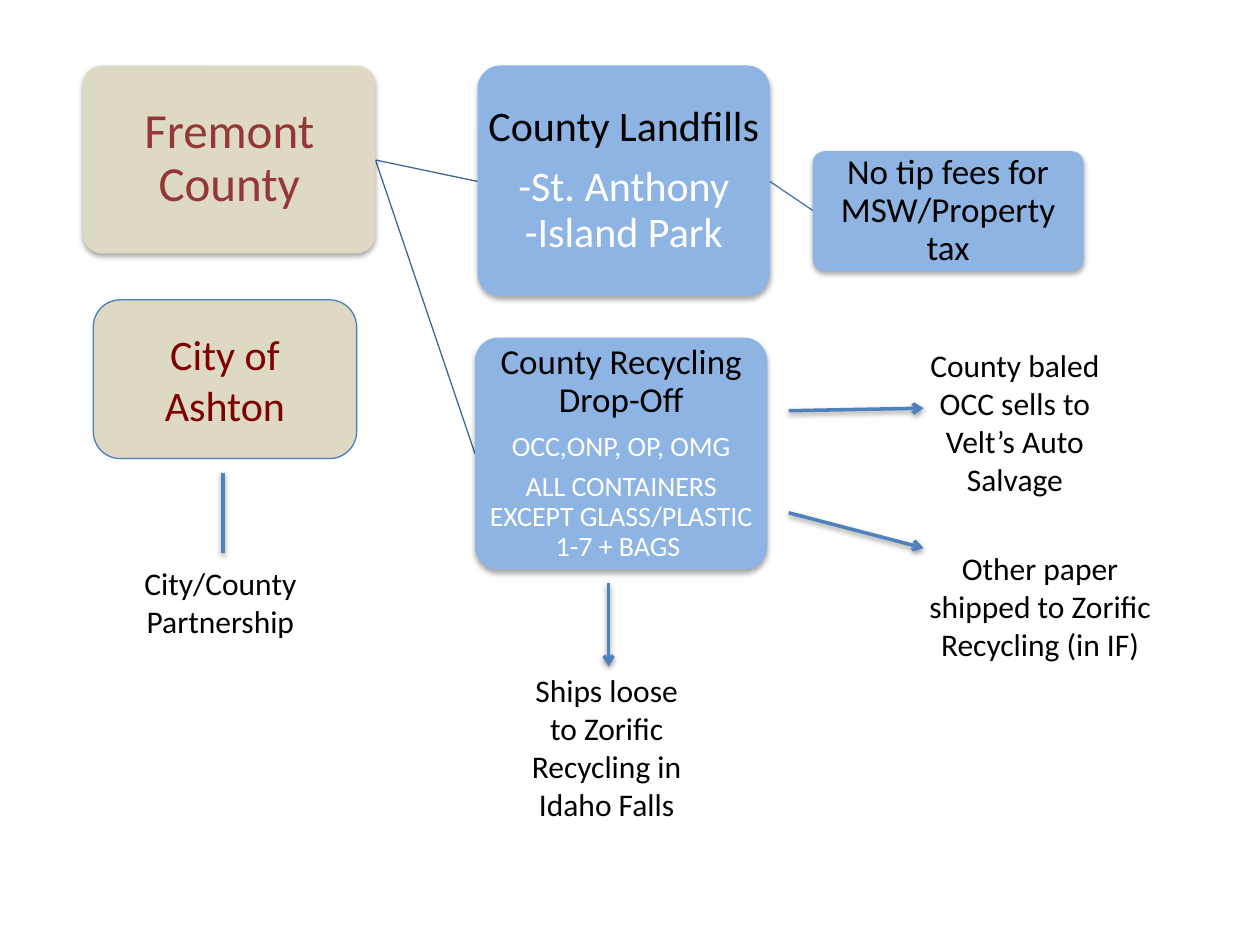
import pptx
import pptx.dml.color
import pptx.enum.shapes
import pptx.enum.text
import pptx.oxml
import pptx.oxml.ns
import pptx.util
from pptx.util import Inches

TAN, SKY, BLUE = "DDD9C3", "8EB4E3", "4F81BD"
BLACK, WHITE = "000000", "FFFFFF"
SPACE = pptx.oxml.ns.nsdecls("a")


def paint(color, code):
    color.rgb = pptx.dml.color.RGBColor.from_string(code)


def shade(effects, alpha, drop):
    """Add a soft shadow that falls straight down by drop points."""
    effects.append(pptx.oxml.parse_xml(
        f'<a:outerShdw {SPACE} blurRad="40000" dist="{pptx.util.Pt(drop)}" '
        f'dir="5400000" rotWithShape="0"><a:srgbClr val="{BLACK}">'
        f'<a:alpha val="{alpha * 1000}"/></a:srgbClr></a:outerShdw>'))


def write(frame, text, size=18, color=BLACK, lines=None, after=0, first=True):
    para = frame.paragraphs[0] if first else frame.add_paragraph()
    para.alignment = pptx.enum.text.PP_ALIGN.CENTER
    para.space_after = pptx.util.Pt(after)
    if lines:
        para.line_spacing = lines
    run = para.add_run()
    run.text = text
    run.font.name = "Calibri"
    run.font.size = pptx.util.Pt(size)
    paint(run.font.color, color)


def draw_box(slide, place, fill, texts, inset=0.02, round_by=0.1, edge=None):
    """Draw a rounded box; each text is (words, size, colour, gap below)."""
    box = slide.shapes.add_shape(
        pptx.enum.shapes.MSO_SHAPE.ROUNDED_RECTANGLE, *map(Inches, place))
    box.adjustments[0] = round_by
    box.fill.solid()
    paint(box.fill.fore_color, fill)
    box.shadow.inherit = False
    if edge:
        paint(box.line.color, edge)
        box.line.width = pptx.util.Pt(0.75)
    else:
        box.line.fill.background()
        shade(box._element.spPr.find(pptx.oxml.ns.qn("a:effectLst")), 35, 1.8)
    frame = box.text_frame
    frame.word_wrap = True
    frame.vertical_anchor = pptx.enum.text.MSO_ANCHOR.MIDDLE
    if inset is not None:
        frame.margin_left = frame.margin_right = Inches(inset)
        frame.margin_top = frame.margin_bottom = Inches(inset)
    for index, (text, size, color, after) in enumerate(texts):
        write(frame, text, size=size, color=color, after=after,
              lines=None if edge else 0.9, first=index == 0)


def draw_note(slide, place, text):
    frame = slide.shapes.add_textbox(*map(Inches, place)).text_frame
    frame.word_wrap = True
    frame.auto_size = pptx.enum.text.MSO_AUTO_SIZE.SHAPE_TO_FIT_TEXT
    write(frame, text)


def draw_line(slide, ends, color=BLUE, width=2, arrow=False, shadow=True):
    line = slide.shapes.add_connector(
        pptx.enum.shapes.MSO_CONNECTOR.STRAIGHT, *map(Inches, ends))
    paint(line.line.color, color)
    line.line.width = pptx.util.Pt(width)
    if arrow:
        line.line._get_or_add_ln().append(
            pptx.oxml.parse_xml(f'<a:tailEnd {SPACE} type="arrow"/>'))
    effects = pptx.oxml.parse_xml(f"<a:effectLst {SPACE}/>")
    line._element.spPr.append(effects)
    if shadow:
        shade(effects, 38, 1.6)


def main():
    deck = pptx.Presentation()
    deck.slide_width, deck.slide_height = Inches(10), Inches(7.5)
    slide = deck.slides.add_slide(deck.slide_layouts[6])

    for ends, color in [
        ((2.98, 1.27, 3.79, 1.44), "3F6797"),
        ((6.11, 1.44, 6.45, 1.67), "4875AC"),
        ((2.98, 1.27, 3.77, 3.6), "3F6797"),
    ]:
        draw_line(slide, ends, color=color, width=0.75, shadow=False)

    draw_box(slide, (0.66, 0.52, 2.32, 1.49), TAN,
             [("Fremont County", 28, "953735", 9.8)])
    draw_box(slide, (3.79, 0.52, 2.32, 1.83), SKY,
             [("County Landfills", 24, BLACK, 8.4),
              ("-St. Anthony", 24, WHITE, 0),
              ("-Island Park", 24, WHITE, 0)])
    draw_box(slide, (6.45, 1.2, 2.15, 0.95), SKY,
             [("No tip fees for MSW/Property tax", 20, BLACK, 7)], inset=0.01)
    draw_box(slide, (3.77, 2.68, 2.32, 1.84), SKY,
             [("County Recycling Drop-Off", 20, BLACK, 7),
              ("OCC,ONP, OP, OMG", 16, WHITE, 5.6),
              ("ALL CONTAINERS EXCEPT GLASS/PLASTIC 1-7 + BAGS ",
               16, WHITE, 5.6)], inset=0.01)
    draw_box(slide, (0.74, 2.38, 2.09, 1.26), TAN,
             [("City of Ashton", 24, "800000", 0)],
             inset=None, round_by=0.17, edge="4B7EBC")

    draw_line(slide, (1.77, 3.75, 1.77, 4.39))
    for ends in [(4.83, 4.63, 4.83, 5.29), (6.26, 3.26, 7.33, 3.24),
                 (6.26, 4.07, 7.33, 4.35)]:
        draw_line(slide, ends, arrow=True)

    for place, text in [
        ((0.98, 4.43, 1.54, 0.71), "City/County Partnership"),
        ((4.05, 5.28, 1.53, 1.31),
         "Ships loose to Zorific Recycling in Idaho Falls"),
        ((7.27, 2.7, 1.57, 1.31),
         "County baled OCC sells to Velt’s Auto Salvage"),
        ((7.27, 4.31, 1.97, 1.31),
         "Other paper shipped to Zorific Recycling (in IF)"),
    ]:
        draw_note(slide, place, text)

    deck.save("out.pptx")


if __name__ == "__main__":
    main()
